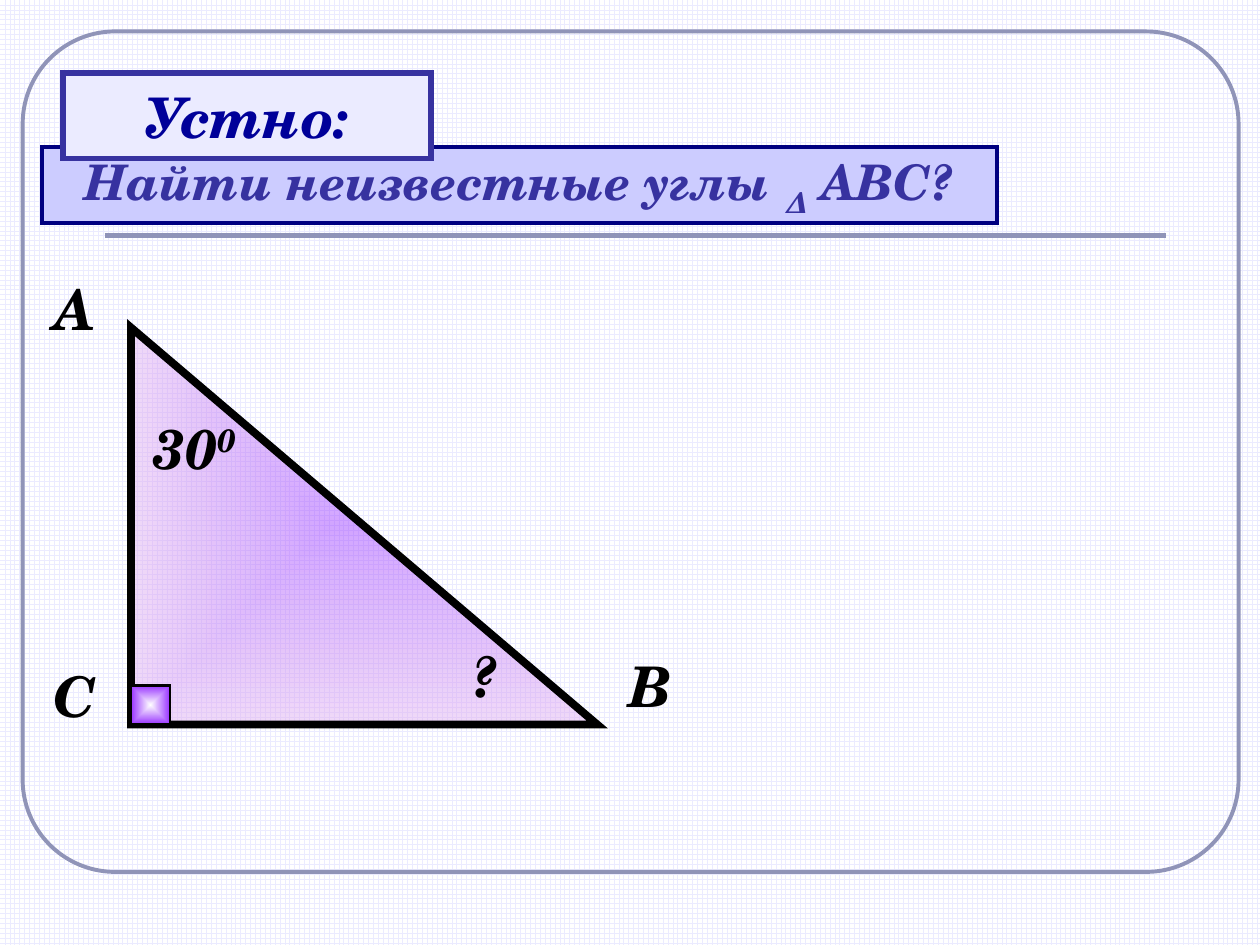
from pptx import Presentation
from pptx.dml.color import RGBColor
from pptx.enum.dml import MSO_PATTERN
from pptx.enum.shapes import MSO_CONNECTOR, MSO_SHAPE
from pptx.enum.text import MSO_AUTO_SIZE, PP_ALIGN
from pptx.oxml.ns import qn
from pptx.util import Inches, Pt
from lxml.etree import SubElement

FONT = "TeX Gyre Schola"
BLACK = RGBColor(0x00, 0x00, 0x00)
WHITE = RGBColor(0xFF, 0xFF, 0xFF)
PALE = RGBColor(0xEB, 0xEB, 0xFF)
LAVENDER = RGBColor(0xCC, 0xCC, 0xFF)
SLATE = RGBColor(0x90, 0x94, 0xB8)
NAVY = RGBColor(0x00, 0x00, 0x80)
INDIGO = RGBColor(0x37, 0x32, 0xA0)
BLUE = RGBColor(0x00, 0x00, 0x99)
VIOLET = RGBColor(0x99, 0x33, 0xFF)
PINK = RGBColor(0xE1, 0xAF, 0xEF)


def add_outlined(kind, box, line_color, line_width):
    shape = slide.shapes.add_shape(kind, *map(Inches, box))
    shape.shadow.inherit = False
    shape.fill.background()
    shape.line.color.rgb = line_color
    shape.line.width = Pt(line_width)
    SubElement(shape.line._ln, qn("a:miter"), lim="800000")
    return shape


def write_runs(paragraph, parts, size, color):
    for text, baseline in parts:
        run = paragraph.add_run()
        run.text = text
        run.font.name = FONT
        run.font.size = Pt(size)
        run.font.bold = run.font.italic = True
        run.font.color.rgb = color
        if baseline:
            run._r.get_or_add_rPr().set("baseline", str(baseline * 1000))


prs = Presentation()
prs.slide_width, prs.slide_height = Inches(10), Inches(7.5)
slide = prs.slides.add_slide(prs.slide_layouts[6])

grid = slide.background.fill
grid.patterned()
grid.pattern = MSO_PATTERN.LARGE_GRID
grid.fore_color.rgb = PALE
grid.back_color.rgb = WHITE

frame = add_outlined(MSO_SHAPE.ROUNDED_RECTANGLE, (0.18, 0.25, 9.65, 6.67), SLATE, 2.25)
frame.adjustments[0] = 0.11

title_rule = slide.shapes.add_connector(
    MSO_CONNECTOR.STRAIGHT, Inches(0.83), Inches(1.87), Inches(9.25), Inches(1.87))
title_rule.line.color.rgb = SLATE
title_rule.line.width = Pt(3)
SubElement(title_rule._element.spPr, qn("a:effectLst"))

triangle = add_outlined(MSO_SHAPE.RIGHT_TRIANGLE, (1.04, 2.6, 3.7, 3.15), BLACK, 4.5)
right_angle = add_outlined(MSO_SHAPE.RECTANGLE, (1.04, 5.44, 0.31, 0.31), BLACK, 1.5)

for figure, stops in [
    (triangle, [(VIOLET, 44), (PINK, 45)]),
    (right_angle, [(WHITE, 100), (VIOLET, 100)]),
]:
    figure.fill.gradient()
    for position, (stop, (color, opacity)) in enumerate(zip(figure.fill.gradient_stops, stops)):
        stop.position = position
        stop.color.rgb = color
    gradient = figure._element.spPr.find(qn("a:gradFill"))
    for color_node, (color, opacity) in zip(gradient.iter(qn("a:srgbClr")), stops):
        if opacity < 100:
            SubElement(color_node, qn("a:alpha"), val=str(opacity * 1000))
    gradient.remove(gradient.find(qn("a:lin")))
    shading = SubElement(gradient, qn("a:path"), {"path": "shape"})
    SubElement(shading, qn("a:fillToRect"), dict.fromkeys("ltrb", "50000"))

for left, top, width, wrap, parts in [
    (0.33, 5.2, 0.52, False, [("С", 0)]),
    (0.33, 2.13, 0.54, False, [("А", 0)]),
    (4.9, 5.12, 0.54, False, [("В", 0)]),
    (1.12, 3.23, 1, False, [("30", 0), ("0", 30)]),
    (3.64, 5.04, 0.47, True, [("?", 0)]),
]:
    label = slide.shapes.add_textbox(Inches(left), Inches(top), Inches(width), Inches(0.63))
    label.text_frame.word_wrap = wrap
    label.text_frame.auto_size = MSO_AUTO_SIZE.SHAPE_TO_FIT_TEXT
    write_runs(label.text_frame.paragraphs[0], parts, 32, BLACK)

task = [("Найти неизвестные углы ", 0), ("Δ", -25), (" АВС?", 0)]
for box, fill, border, border_width, parts, size, color in [
    ((0.33, 1.17, 7.58, 0.6), LAVENDER, NAVY, 2.25, task, 28, INDIGO),
    ((0.5, 0.58, 2.92, 0.68), PALE, INDIGO, 3, [("Устно:", 0)], 32, BLUE),
]:
    banner = add_outlined(MSO_SHAPE.RECTANGLE, box, border, border_width)
    banner.fill.solid()
    banner.fill.fore_color.rgb = fill
    banner.text_frame.word_wrap = True
    banner.text_frame.auto_size = MSO_AUTO_SIZE.SHAPE_TO_FIT_TEXT
    heading = banner.text_frame.paragraphs[0]
    heading.alignment = PP_ALIGN.CENTER
    write_runs(heading, parts, size, color)

prs.save("out.pptx")
